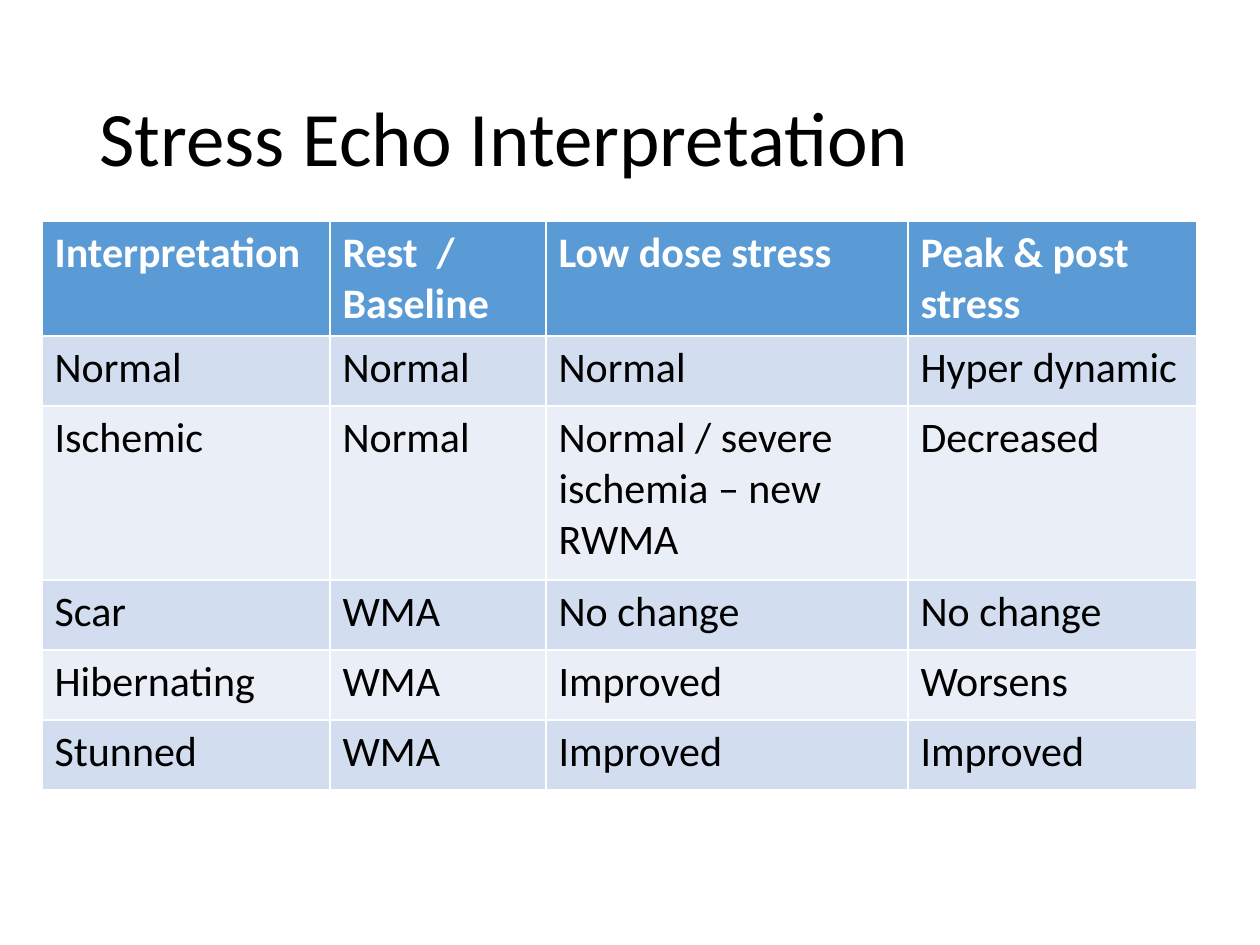
from pptx import Presentation
from pptx import util as u
from pptx.dml.color import RGBColor
from pptx.enum import text

PX = u.Inches(1) // 126
FONT = "Calibri"
BLACK = RGBColor(0x00, 0x00, 0x00)
WHITE = RGBColor(0xFF, 0xFF, 0xFF)
HEADER_BLUE = RGBColor(0x5B, 0x9B, 0xD5)
BANDS = [RGBColor(0xEA, 0xEF, 0xF7), RGBColor(0xD2, 0xDE, 0xEF)]

FINDINGS = [
    ["Interpretation", "Rest  / Baseline", "Low dose stress", "Peak & post stress"],
    ["Normal", "Normal", "Normal", "Hyper dynamic"],
    ["Ischemic", "Normal", "Normal / severe ischemia – new RWMA", "Decreased"],
    ["Scar", "WMA", "No change", "No change"],
    ["Hibernating", "WMA", "Improved", "Worsens"],
    ["Stunned", "WMA", "Improved", "Improved"],
]
COLUMN_WIDTHS = [288, 216, 362, 289]
ROW_HEIGHTS = [70, 70, 174, 70, 70, 70]


def style(paragraph, size, color, bold=False):
    paragraph.font.name = FONT
    paragraph.font.size = u.Pt(size)
    paragraph.font.color.rgb = color
    paragraph.font.bold = bold


prs = Presentation()
prs.slide_width, prs.slide_height = u.Inches(10), u.Inches(7.5)
slide = prs.slides.add_slide(prs.slide_layouts[5])

title = slide.shapes.title
title.left, title.top, title.width, title.height = 87 * PX, 50 * PX, 1086 * PX, 183 * PX
title.text_frame.text = "Stress Echo Interpretation"
title.text_frame.vertical_anchor = text.MSO_ANCHOR.MIDDLE
heading = title.text_frame.paragraphs[0]
heading.alignment = text.PP_ALIGN.LEFT
heading.line_spacing = 0.9
style(heading, 44, BLACK)

# The default table style supplies the white cell borders.
findings = slide.shapes.add_table(
    len(FINDINGS), len(COLUMN_WIDTHS), 42 * PX, 221 * PX,
    sum(COLUMN_WIDTHS) * PX, sum(ROW_HEIGHTS) * PX).table
for column, width in zip(findings.columns, COLUMN_WIDTHS):
    column.width = width * PX
for row, height in zip(findings.rows, ROW_HEIGHTS):
    row.height = height * PX

for r, entries in enumerate(FINDINGS):
    is_header = r == 0
    for c, entry in enumerate(entries):
        cell = findings.cell(r, c)
        cell.text = entry
        cell.fill.solid()
        cell.fill.fore_color.rgb = HEADER_BLUE if is_header else BANDS[r % 2]
        style(cell.text_frame.paragraphs[0], 24, WHITE if is_header else BLACK, is_header)

prs.save("out.pptx")
